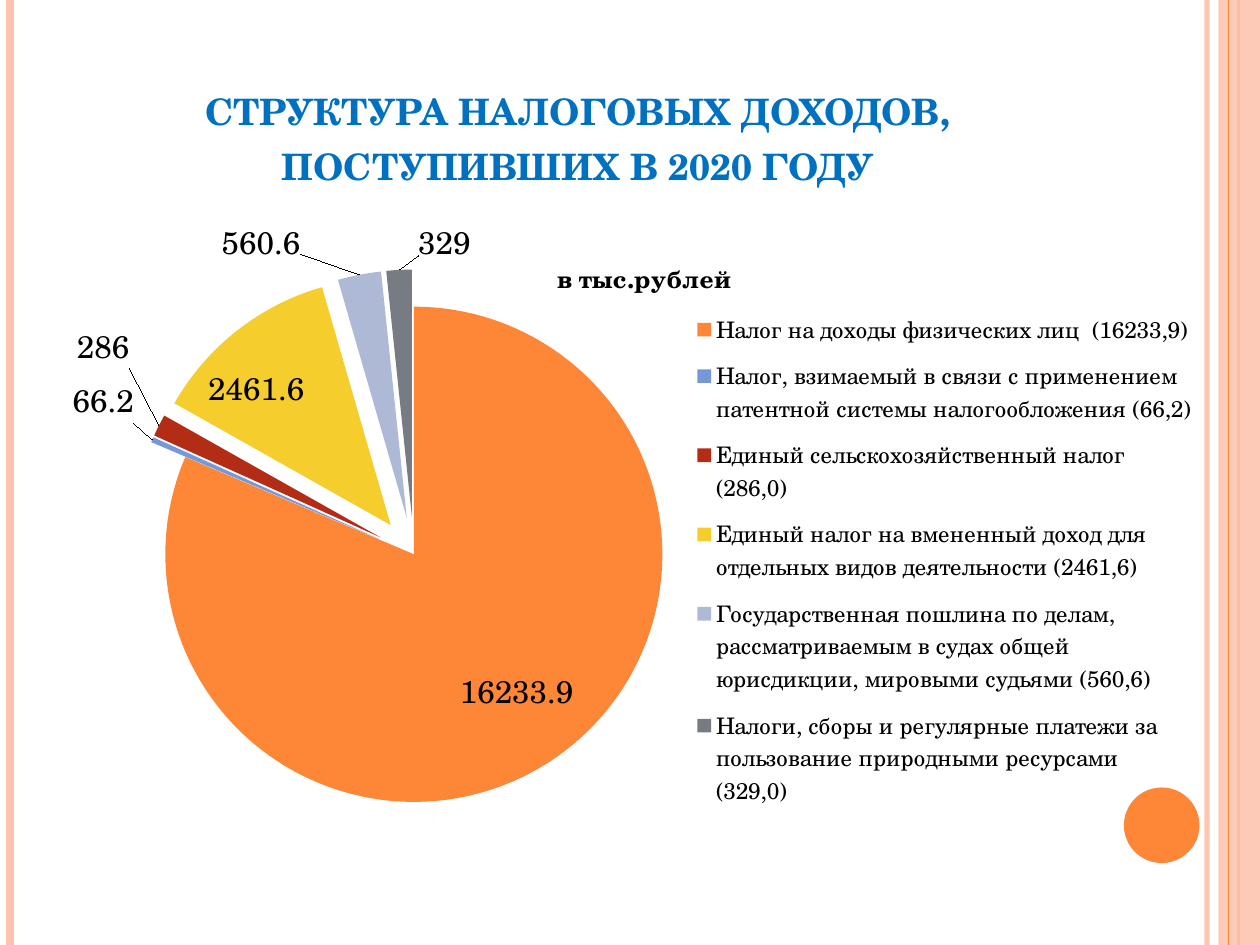
from lxml import etree
from pptx import Presentation
from pptx.chart.data import CategoryChartData
from pptx.dml.color import RGBColor
from pptx.enum.chart import XL_CHART_TYPE, XL_LABEL_POSITION, XL_LEGEND_POSITION
from pptx.enum.shapes import MSO_CONNECTOR, MSO_SHAPE
from pptx.enum.text import MSO_ANCHOR, PP_ALIGN
from pptx.oxml.ns import qn
from pptx.util import Inches, Pt

PIE = XL_CHART_TYPE.PIE
CENTER, OUTSIDE = XL_LABEL_POSITION.CENTER, XL_LABEL_POSITION.OUTSIDE_END
RIGHT = XL_LEGEND_POSITION.RIGHT
FONT = "TeX Gyre Schola"
ORANGE, PEACH = "FE8637", "FEC3AE"
WIDTH, HEIGHT = 10, 7.5

# x, width in points, opacity in percent
STRIPES_BEHIND = [(9.58, 3, 93, PEACH), (0.08, 4.5, 100, PEACH), (9.83, 1.5, 100, ORANGE)]
STRIPE_FRONT = (9.75, 0.75, 100, ORANGE)

# name, value, colour, label position, label shift as a share of the chart
TAXES = [
    ("Налог на доходы физических лиц  (16233,9)", 16233.9, ORANGE, CENTER, (0.03, 0.05)),
    ("Налог, взимаемый в связи с применением патентной системы налогообложения (66,2)",
     66.2, "7598D9", OUTSIDE, (-0.01, -0.02)),
    ("Единый сельскохозяйственный налог (286,0)", 286, "B32C16", OUTSIDE, (-0.02, -0.08)),
    ("Единый налог на вмененный доход для отдельных видов деятельности (2461,6)",
     2461.6, "F5CD2D", CENTER, (-0.05, -0.06)),
    ("Государственная пошлина по делам, рассматриваемым в судах общей юрисдикции, "
     "мировыми судьями (560,6)", 560.6, "AEBAD5", OUTSIDE, (-0.05, -0.02)),
    ("Налоги, сборы и регулярные платежи за пользование природными ресурсами (329,0)",
     329, "777C84", OUTSIDE, (0.04, -0.01)),
]


def set_color(fill, color, opacity=100):
    fill.solid()
    fill.fore_color.rgb = RGBColor.from_string(color)
    if opacity < 100:
        clr = next(fill._xPr.iter(qn("a:srgbClr")))
        etree.SubElement(clr, qn("a:alpha"), val=str(opacity * 1000))


def set_font(font, size, color="000000", bold=False):
    font.name, font.size, font.bold = FONT, Pt(size), bold
    set_color(font.fill, color)


def add_stripe(slide, x, width, opacity, color):
    line = slide.shapes.add_connector(
        MSO_CONNECTOR.STRAIGHT, Inches(x), 0, Inches(x), Inches(HEIGHT))
    line.line.width = Pt(width)
    set_color(line.line.fill, color, opacity)
    etree.SubElement(line._element.spPr, qn("a:effectLst"))


def add_shape(slide, kind, x, y, w, h, color, opacity=100):
    sp = slide.shapes.add_shape(kind, Inches(x), Inches(y), Inches(w), Inches(h))
    sp.shadow.inherit = False
    set_color(sp.fill, color, opacity)
    sp.line.fill.background()


def add_text(slide, text, x, y, w, h, size, color, bold=False, small_caps=False):
    tf = slide.shapes.add_textbox(Inches(x), Inches(y), Inches(w), Inches(h)).text_frame
    tf.word_wrap = True
    tf.vertical_anchor = MSO_ANCHOR.BOTTOM
    p = tf.paragraphs[0]
    p.alignment = PP_ALIGN.CENTER
    r = p.add_run()
    r.text = text
    set_font(r.font, size, color, bold)
    if small_caps:
        r.font._element.set("cap", "small")


def set_layout(parent, index, **values):
    """Give a chart part a manual layout, as its child number index."""
    for old in parent.findall(qn("c:layout")):
        parent.remove(old)
    layout = etree.Element(qn("c:layout"))
    manual = etree.SubElement(layout, qn("c:manualLayout"))
    for tag, value in values.items():
        etree.SubElement(manual, qn("c:" + tag), val=str(value))
    parent.insert(index, layout)


def add_tax_pie(slide, x, y, w, h):
    data = CategoryChartData()
    data.categories = [tax[0] for tax in TAXES]
    data.add_series("Series 1", [tax[1] for tax in TAXES])
    chart = slide.shapes.add_chart(
        PIE, Inches(x), Inches(y), Inches(w), Inches(h), data).chart
    set_font(chart.font, 18)

    chart.has_title = True
    tf = chart.chart_title.text_frame
    tf.text = "в тыс.рублей"
    set_font(tf.paragraphs[0].runs[0].font, 14, bold=True)
    set_layout(chart.chart_title._element, 1, xMode="edge", yMode="edge", x=0.43, y=0.05)

    chart.has_legend = True
    chart.legend.position = RIGHT
    chart.legend.include_in_layout = False
    set_font(chart.legend.font, 13)
    set_layout(chart.legend._element, 1, xMode="edge", yMode="edge",
               x=0.56, y=0.12, w=0.43, h=0.78)

    plot = chart.plots[0]
    plot.vary_by_categories = True
    set_layout(plot._element.getparent(), 0, layoutTarget="inner", xMode="edge",
               yMode="edge", x=0.06, y=0.075, w=0.498, h=0.852)
    style_slices(plot.series[0])


def style_slices(series):
    for i, (_, _, color, position, _) in enumerate(TAXES):
        point = series.points[i]
        set_color(point.format.fill, color)
        point.data_label.position = position
    ser = series._element
    first = ser.find(qn("c:dPt"))
    first.addprevious(etree.Element(qn("c:explosion"), val="15"))
    first.find(qn("c:spPr")).addprevious(etree.Element(qn("c:explosion"), val="0"))
    for label, tax in zip(ser.iter(qn("c:dLbl")), TAXES):
        dx, dy = tax[-1]
        set_layout(label, 1, x=dx, y=dy)


def main():
    prs = Presentation()
    prs.slide_width, prs.slide_height = Inches(WIDTH), Inches(HEIGHT)
    slide = prs.slides.add_slide(prs.slide_layouts[6])
    set_color(slide.background.fill, "FFFFFF")
    for stripe in STRIPES_BEHIND:
        add_stripe(slide, *stripe)
    add_shape(slide, MSO_SHAPE.RECTANGLE, 9.67, 0, 0.33, HEIGHT, PEACH, opacity=87)
    add_stripe(slide, *STRIPE_FRONT)
    add_shape(slide, MSO_SHAPE.OVAL, 8.92, 6.25, 0.6, 0.6, ORANGE)
    add_text(slide, "структура налоговых доходов, поступивших в 2020 году",
             0.5, 0.3, 8.17, 1.25, size=26, color="0070C0", bold=True, small_caps=True)
    add_tax_pie(slide, 0.47, 1.72, 9.11, 5.33)
    prs.save("out.pptx")


if __name__ == "__main__":
    main()
